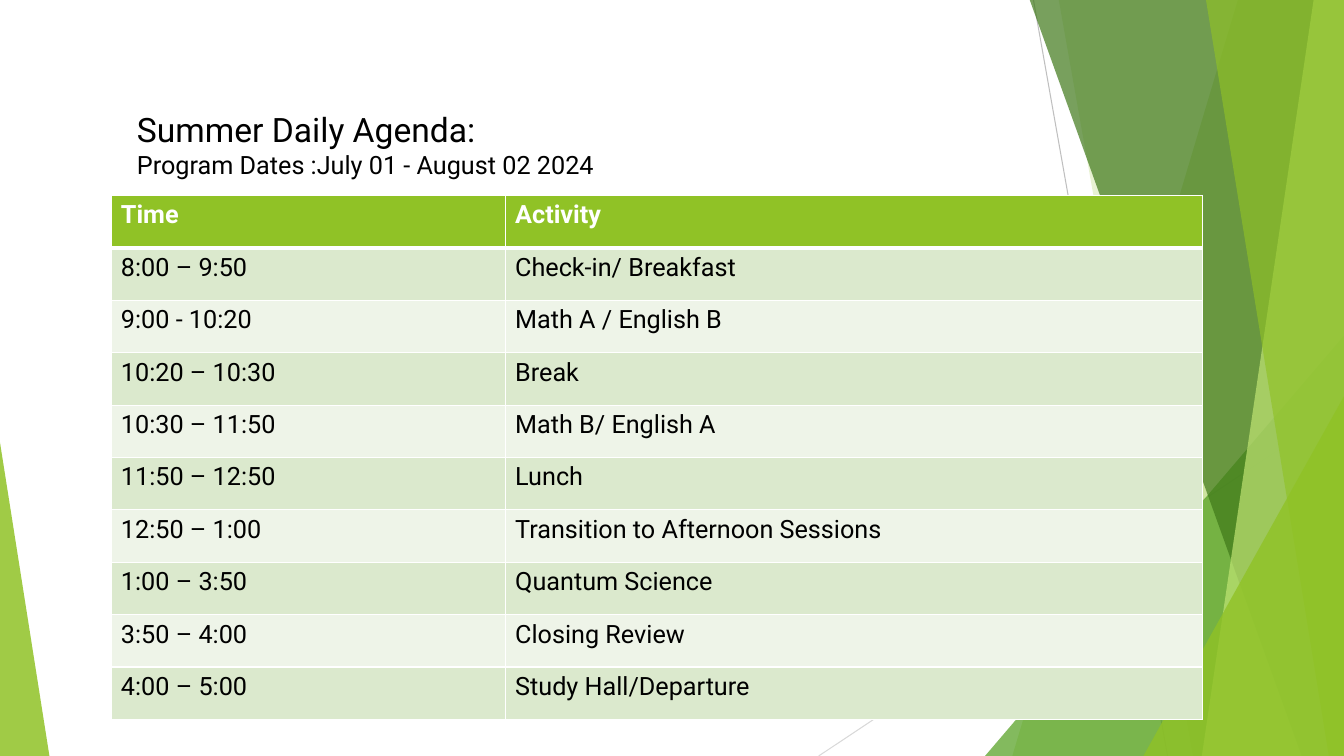
"""Build the daily agenda slide."""
from lxml.etree import SubElement
from pptx import Presentation
from pptx.dml.color import RGBColor
from pptx.enum.shapes import MSO_CONNECTOR as Connector, MSO_SHAPE as Shape
from pptx.oxml import parse_xml
from pptx.oxml.ns import nsdecls, qn
from pptx.util import Inches, Pt

FONT = "Roboto"
LIME = "90C226"
WHITE = "FFFFFF"
BLACK = "000000"
BANDS = ("DBE9CD", "EEF4E8")
RIGHT, TOP, BOTTOM = 13.33, -0.01, 7.5
ROW_HEIGHT = 0.52
COLUMN_WIDTHS = (3.91, 6.92)

RAYS = (
    (10.25, 0, 11.58, 7.5, "BFBFBF"),
    (13.33, 4.03, 8.12, 7.5, "D9D9D9"),
)
BACK_PANELS = ((12.28, 10.04, LIME, 30), (10.5, 11.83, LIME, 20))
FRONT_PANELS = (
    (10.21, 12.91, "3F7819", 70),
    (13.03, 11.92, "C0E474", 70),
    (11.96, 13.18, LIME, 65),
)
AGENDA = (
    ("Time", "Activity"),
    ("8:00 – 9:50", "Check-in/ Breakfast"),
    ("9:00 - 10:20", "Math A / English B"),
    ("10:20 – 10:30", "Break"),
    ("10:30 – 11:50", "Math B/ English A"),
    ("11:50 – 12:50", "Lunch"),
    ("12:50 – 1:00", "Transition to Afternoon Sessions"),
    ("1:00 – 3:50", "Quantum Science"),
    ("3:50 – 4:00", "Closing Review"),
    ("4:00 – 5:00", "Study Hall/Departure"),
)


def rgb(color):
    """Turn a hex string into a colour."""
    return RGBColor.from_string(color)


def paint(shape, color, opacity):
    """Give a shape a translucent fill without line or shadow."""
    shape.shadow.inherit = False
    shape.line.fill.background()
    shape.fill.solid()
    shape.fill.fore_color.rgb = rgb(color)
    tint = shape.fill._xPr.find(qn("a:solidFill"))[0]
    SubElement(tint, qn("a:alpha")).set("val", str(opacity * 1000))


def add_ray(page, x1, y1, x2, y2, color):
    """Draw a thin straight line."""
    ray = page.shapes.add_connector(
        Connector.STRAIGHT, Inches(x1), Inches(y1), Inches(x2), Inches(y2))
    ray.line.color.rgb = rgb(color)
    ray.line.width = Pt(0.75)
    SubElement(ray._element.spPr, qn("a:effectLst"))


def add_panel(page, top_x, bottom_x, color, opacity):
    """Draw a slanted panel that reaches the right edge."""
    outline = page.shapes.build_freeform(Inches(top_x), Inches(TOP))
    corners = ((RIGHT, TOP), (RIGHT, BOTTOM), (bottom_x, BOTTOM))
    outline.add_line_segments([(Inches(x), Inches(y)) for x, y in corners])
    paint(outline.convert_to_shape(), color, opacity)


def add_wedge(page, left, top, width, apex, color, opacity):
    """Draw a triangle that stands on the bottom edge."""
    wedge = page.shapes.add_shape(
        Shape.ISOSCELES_TRIANGLE, Inches(left), Inches(top),
        Inches(width), Inches(BOTTOM - top))
    wedge.adjustments[0] = apex
    paint(wedge, color, opacity)


def add_span(para, text, size, color=BLACK, bold=False):
    """Add one formatted run to a paragraph."""
    span = para.add_run()
    span.text = text
    span.font.name = FONT
    span.font.size = Pt(size)
    span.font.bold = bold
    span.font.color.rgb = rgb(color)


def add_heading(page):
    """Add the title and the program dates."""
    box = page.shapes.add_textbox(
        Inches(1.26), Inches(1.03), Inches(8.28), Inches(0.81))
    frame = box.text_frame
    frame.word_wrap = True
    add_span(frame.paragraphs[0], "Summer Daily Agenda:", 24)
    add_span(frame.add_paragraph(),
             "Program Dates :July 01 - August 02 2024", 18)


def set_borders(cell, top, bottom):
    """Give a cell white borders."""
    properties = cell._tc.get_or_add_tcPr()
    widths = (("lnL", 1), ("lnR", 1), ("lnT", top), ("lnB", bottom))
    for index, (side, width) in enumerate(widths):
        properties.insert(index, parse_xml(
            f'<a:{side} {nsdecls("a")} w="{Pt(width)}"><a:solidFill>'
            f'<a:srgbClr val="{WHITE}"/></a:solidFill></a:{side}>'))


def add_agenda(page):
    """Add the banded agenda table."""
    table = page.shapes.add_table(
        len(AGENDA), len(COLUMN_WIDTHS), Inches(1.1), Inches(1.94),
        Inches(sum(COLUMN_WIDTHS)), Inches(ROW_HEIGHT * len(AGENDA))).table
    for column, width in zip(table.columns, COLUMN_WIDTHS):
        column.width = Inches(width)
    for number, entries in enumerate(AGENDA):
        table.rows[number].height = Inches(ROW_HEIGHT)
        header = number == 0
        for cell, text in zip(table.rows[number].cells, entries):
            cell.fill.solid()
            cell.fill.fore_color.rgb = rgb(
                LIME if header else BANDS[(number - 1) % 2])
            set_borders(cell, 1, 3 if header else 1)
            add_span(cell.text_frame.paragraphs[0], text, 18,
                     WHITE if header else BLACK, header)


def main():
    """Build and save the deck."""
    deck = Presentation()
    deck.slide_width, deck.slide_height = Inches(13.33), Inches(7.5)
    page = deck.slides.add_slide(deck.slide_layouts[6])
    for ray in RAYS:
        add_ray(page, *ray)
    for panel in BACK_PANELS:
        add_panel(page, *panel)
    add_wedge(page, 9.77, 3.33, 3.56, 1, "54A021", 72)
    for panel in FRONT_PANELS:
        add_panel(page, *panel)
    add_wedge(page, 11.34, 3.93, 1.99, 1, LIME, 80)
    add_wedge(page, 0, 4.39, 0.49, 0, LIME, 85)
    add_heading(page)
    add_agenda(page)
    deck.save("out.pptx")


if __name__ == "__main__":
    main()
